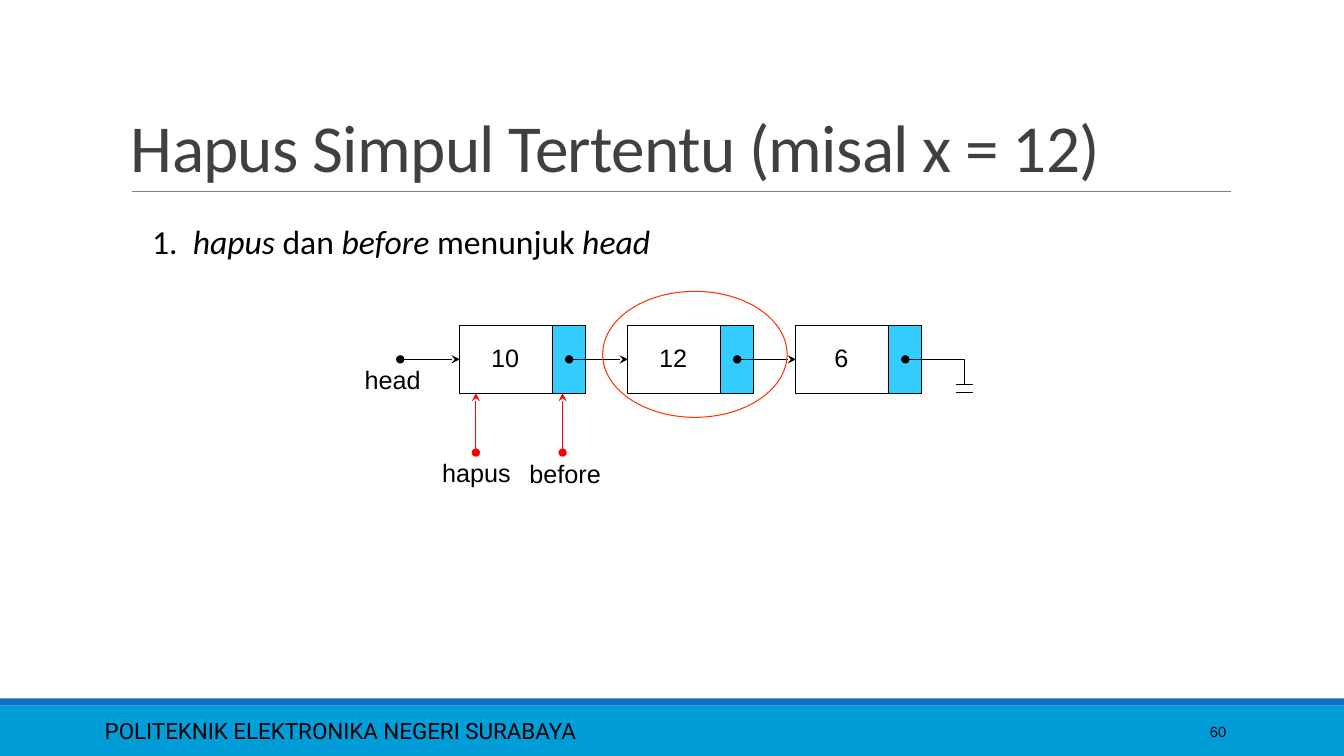
from lxml.etree import SubElement
from pptx import Presentation
from pptx.dml.color import RGBColor
from pptx.enum.shapes import MSO_CONNECTOR as CONN, MSO_SHAPE as SHAPE
from pptx.enum.text import MSO_ANCHOR as ANCHOR, PP_ALIGN as ALIGN
from pptx.oxml.ns import qn
from pptx.util import Inches, Pt

COLORS = {
    "band": "009DD9", "stripe": "0F6FC6", "rule": "808080", "title": "404040",
    "black": "000000", "pointer": "33CCFF", "red": "FF0000", "ring": "FF3300",
}
NODE_W, NODE_H, DATA_W, POINTER_W = 1.25, 0.67, 0.92, 0.33
NODE_STEP = 1.667
ARROW_LEN = 0.59


def rgb(name):
    return RGBColor.from_string(COLORS[name])


def add_text(s, box, runs, size=18, font="Arial", color="black", align=ALIGN.LEFT,
             anchor=ANCHOR.TOP, spacing=None, tracking=None):
    """Add a one-paragraph box; runs is a string or (text, italic) pairs."""
    tf = s.shapes.add_textbox(*map(Inches, box)).text_frame
    tf.word_wrap = True
    tf.vertical_anchor = anchor
    p = tf.paragraphs[0]
    p.alignment = align
    if spacing:
        p.line_spacing = spacing
    for text, italic in [(runs, False)] if isinstance(runs, str) else runs:
        r = p.add_run()
        r.text = text
        r.font.size, r.font.name, r.font.italic = Pt(size), font, italic
        r.font.color.rgb = rgb(color)
        if tracking:
            r.font._element.set("spc", str(tracking))


def add_box(s, box, fill=None, line=None, kind=SHAPE.RECTANGLE):
    sp = s.shapes.add_shape(kind, *map(Inches, box))
    sp.shadow.inherit = False
    if fill:
        sp.fill.solid()
        sp.fill.fore_color.rgb = rgb(fill)
    else:
        sp.fill.background()
    if line:
        sp.line.color.rgb = rgb(line)
        sp.line.width = Pt(0.75)
    else:
        sp.line.fill.background()
    return sp


def add_line(s, x1, y1, x2, y2, color="black", width=0.75, dot=False, arrow=False):
    cn = s.shapes.add_connector(CONN.STRAIGHT, *map(Inches, (x1, y1, x2, y2)))
    cn.line.color.rgb = rgb(color)
    cn.line.width = Pt(width)
    ln = cn.line._get_or_add_ln()
    if dot:
        SubElement(ln, qn("a:headEnd"), type="oval")
    if arrow:
        SubElement(ln, qn("a:tailEnd"), type="stealth")
    SubElement(cn._element.spPr, qn("a:effectLst"))
    return cn


def add_footer(s, x, y, w, h):
    add_box(s, (x, y + 0.07, w, h - 0.07), fill="band")
    add_box(s, (x, y, w, 0.07), fill="stripe")
    add_text(s, (x + 0.94, y + 0.12, 8.41, 0.4), "POLITEKNIK ELEKTRONIKA NEGERI SURABAYA",
             size=16, font="Roboto", anchor=ANCHOR.MIDDLE)
    add_text(s, (x + 10.83, y + 0.13, 1.43, 0.4), "60", size=10.5,
             align=ALIGN.RIGHT, anchor=ANCHOR.MIDDLE)


def add_title(s, x, y, w, h):
    add_line(s, x + 0.11, y + h, x + w + 0.01, y + h, color="rule", width=0.5)
    add_text(s, (x, y, w, h), "Hapus Simpul Tertentu (misal x = 12)", size=48,
             font="Calibri", color="title", anchor=ANCHOR.BOTTOM,
             spacing=0.85, tracking=-50)


def add_step(s, x, y, w, h):
    add_text(s, (x, y, w, h),
             [("1.  ", False), ("hapus ", True), ("dan ", False), ("before ", True),
              ("menunjuk ", False), ("head", True)], size=24, font="Calibri")


def add_node(s, x, y, value):
    """Draw one list node and return its data cell."""
    data = add_box(s, (x, y, DATA_W, NODE_H), line="black")
    add_box(s, (x + DATA_W, y, POINTER_W, NODE_H), fill="pointer", line="black")
    add_text(s, (x + 0.2, y + 0.12, 0.5, 0.4), value, align=ALIGN.CENTER)
    return data


def add_null(s, x, y):
    """Draw the end-of-list mark hanging from the point x, y."""
    add_line(s, x, y, x, y + 0.25)
    for drop in (0.25, 0.33):
        add_line(s, x - 0.09, y + drop, x + 0.08, y + drop)


def add_label(s, x, y, text):
    add_text(s, (x, y, 1.17, 0.4), text, align=ALIGN.CENTER)


def add_linked_list(s, x, y):
    """Draw the list with the first node's top left corner at x, y."""
    mid, bottom = y + NODE_H / 2, y + NODE_H
    lefts = [x + i * NODE_STEP for i in range(3)]
    nodes = [add_node(s, left, y, value) for left, value in zip(lefts, ("10", "12", "6"))]

    # Arrows into each node: from head, then from the node before
    starts = [x - ARROW_LEN] + [left + NODE_W - POINTER_W / 2 for left in lefts]
    for start, node, left in zip(starts, nodes, lefts):
        add_line(s, start, mid, left, mid, dot=True, arrow=True).end_connect(node, 1)
    end = starts[-1] + ARROW_LEN
    add_line(s, starts[-1], mid, end, mid, dot=True)
    add_null(s, end, mid)
    add_label(s, x - 1.25, mid, "head")

    # Pointers below the first node
    for dx, label_dx, label_dy, name in ((0.16, -0.42, 0, "hapus"), (1.02, 0.46, 0.01, "before")):
        foot = bottom + ARROW_LEN
        add_line(s, x + dx, foot, x + dx, bottom, color="red", dot=True, arrow=True)
        add_label(s, x + label_dx, foot + label_dy, name)

    # Ring around the node to delete
    add_box(s, (lefts[1] - 0.25, y - 0.34, 1.83, 1.25), line="ring", kind=SHAPE.OVAL)


def main():
    prs = Presentation()
    prs.slide_width, prs.slide_height = Inches(13.33), Inches(7.5)
    s = prs.slides.add_slide(prs.slide_layouts[6])
    add_footer(s, 0, 6.93, 13.33, 0.57)
    add_title(s, 1.2, 0.31, 11, 1.59)
    add_step(s, 1.41, 2.14, 6.67, 0.5)
    add_linked_list(s, 4.56, 3.23)
    prs.save("out.pptx")


if __name__ == "__main__":
    main()
